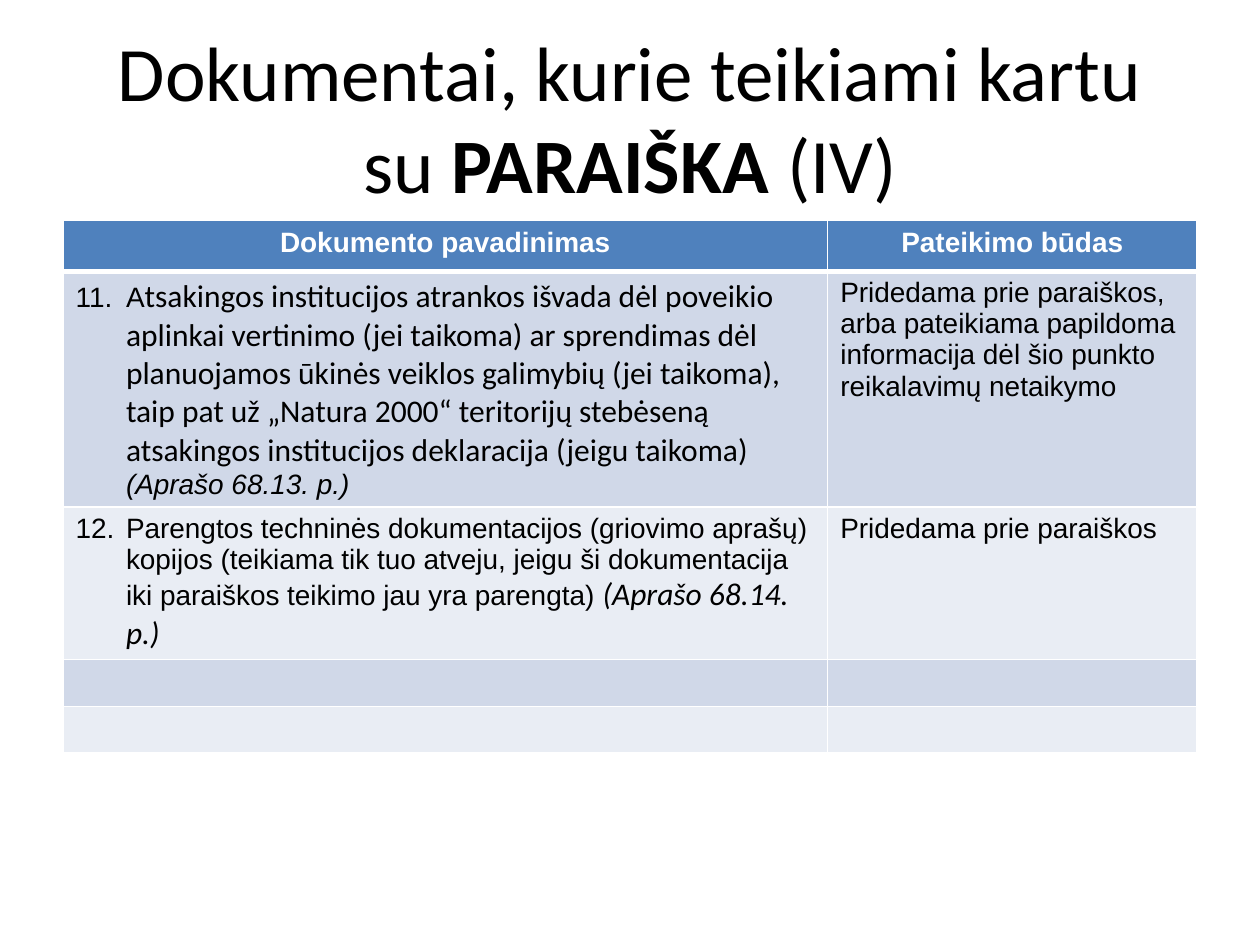
"""Build a slide listing the documents submitted with the application."""
import pptx
import pptx.dml.color
import pptx.enum.text
import pptx.oxml
import pptx.oxml.ns
import pptx.util

Pt = pptx.util.Pt
RGBColor = pptx.dml.color.RGBColor
CENTER = pptx.enum.text.PP_ALIGN.CENTER
MIDDLE = pptx.enum.text.MSO_ANCHOR.MIDDLE

BLACK = RGBColor(0x00, 0x00, 0x00)
WHITE = RGBColor(0xFF, 0xFF, 0xFF)
HEADER_BLUE = RGBColor(0x4F, 0x81, 0xBD)
BAND_DARK = RGBColor(0xD0, 0xD8, 0xE8)
BAND_LIGHT = RGBColor(0xE9, 0xED, 0xF4)


def add_span(para, text, size, name, color=BLACK, bold=False, italic=False):
    span = para.add_run()
    span.text = text
    span.font.size = Pt(size)
    span.font.name = name
    span.font.color.rgb = color
    span.font.bold = bold
    span.font.italic = italic


def add_border(cell, side, width):
    cell._tc.get_or_add_tcPr().append(pptx.oxml.parse_xml(
        f'<a:{side} {pptx.oxml.ns.nsdecls("a")} w="{Pt(width)}">'
        f'<a:solidFill><a:srgbClr val="{WHITE}"/></a:solidFill></a:{side}>'))


deck = pptx.Presentation()
deck.slide_width = Pt(720)
deck.slide_height = Pt(540)
page = deck.slides.add_slide(deck.slide_layouts[5])

title = page.shapes.title
title.left, title.top, title.width, title.height = Pt(36), Pt(21.6), Pt(648), Pt(90)
title.text_frame.vertical_anchor = MIDDLE
title.text_frame.word_wrap = True
para = title.text_frame.paragraphs[0]
para.alignment = CENTER
add_span(para, "Dokumentai, kurie teikiami kartu su ", 44, "Calibri")
add_span(para, "PARAIŠKA ", 44, "Calibri", bold=True)
add_span(para, "(IV)", 44, "Calibri")

HEADERS = ["Dokumento pavadinimas", "Pateikimo būdas"]
DOCUMENTS = [
    ([("11.\tA", 16, "Arial", False),
      ("tsakingos institucijos atrankos išvada dėl poveikio aplinkai vertinimo "
       "(jei taikoma) ar sprendimas dėl planuojamos ūkinės veiklos galimybių "
       "(jei taikoma), taip pat už „Natura 2000“ teritorijų stebėseną atsakingos "
       "institucijos deklaracija (jeigu taikoma)", 18, "Calibri", False),
      (" ", 16, "Arial", False),
      ("(Aprašo 68.13. p.)", 16, "Arial", True)],
     "Pridedama prie paraiškos, arba pateikiama papildoma informacija "
     "dėl šio punkto reikalavimų netaikymo"),
    ([("12.\tParengtos techninės dokumentacijos (griovimo aprašų) kopijos "
       "(teikiama tik tuo atveju, jeigu ši dokumentacija iki paraiškos teikimo "
       "jau yra parengta) ", 16, "Arial", False),
      ("(Aprašo 68.14. p.)", 18, "Calibri", True)],
     "Pridedama prie paraiškos"),
]
COLUMN_WIDTHS = [437, 211]
ROW_HEIGHTS = [29, 134, 87, 26.6, 26.6]

table = page.shapes.add_table(
    len(ROW_HEIGHTS), len(COLUMN_WIDTHS),
    Pt(36), Pt(126), Pt(sum(COLUMN_WIDTHS)), Pt(sum(ROW_HEIGHTS))).table
for column, width in zip(table.columns, COLUMN_WIDTHS):
    column.width = Pt(width)

for index, height in enumerate(ROW_HEIGHTS):
    table.rows[index].height = Pt(height)
    band = BAND_DARK if index % 2 else BAND_LIGHT
    for cell in table.rows[index].cells:
        for side in ("lnL", "lnR", "lnT", "lnB"):
            add_border(cell, side, 3 if index == 0 and side == "lnB" else 1)
        cell.fill.solid()
        cell.fill.fore_color.rgb = band if index else HEADER_BLUE
        if index > len(DOCUMENTS):
            cell.text_frame.paragraphs[0].font.size = Pt(16)

for column, header in enumerate(HEADERS):
    para = table.cell(0, column).text_frame.paragraphs[0]
    para.alignment = CENTER
    add_span(para, header, 16, "Arial", WHITE, bold=True)

for row, (spans, method) in enumerate(DOCUMENTS, start=1):
    para = table.cell(row, 0).text_frame.paragraphs[0]
    properties = para._p.get_or_add_pPr()
    properties.set("marL", str(Pt(28.8)))
    properties.set("indent", str(-Pt(28.8)))
    for text, size, name, italic in spans:
        add_span(para, text, size, name, italic=italic)
    add_span(table.cell(row, 1).text_frame.paragraphs[0], method, 16, "Arial")

deck.save("out.pptx")
